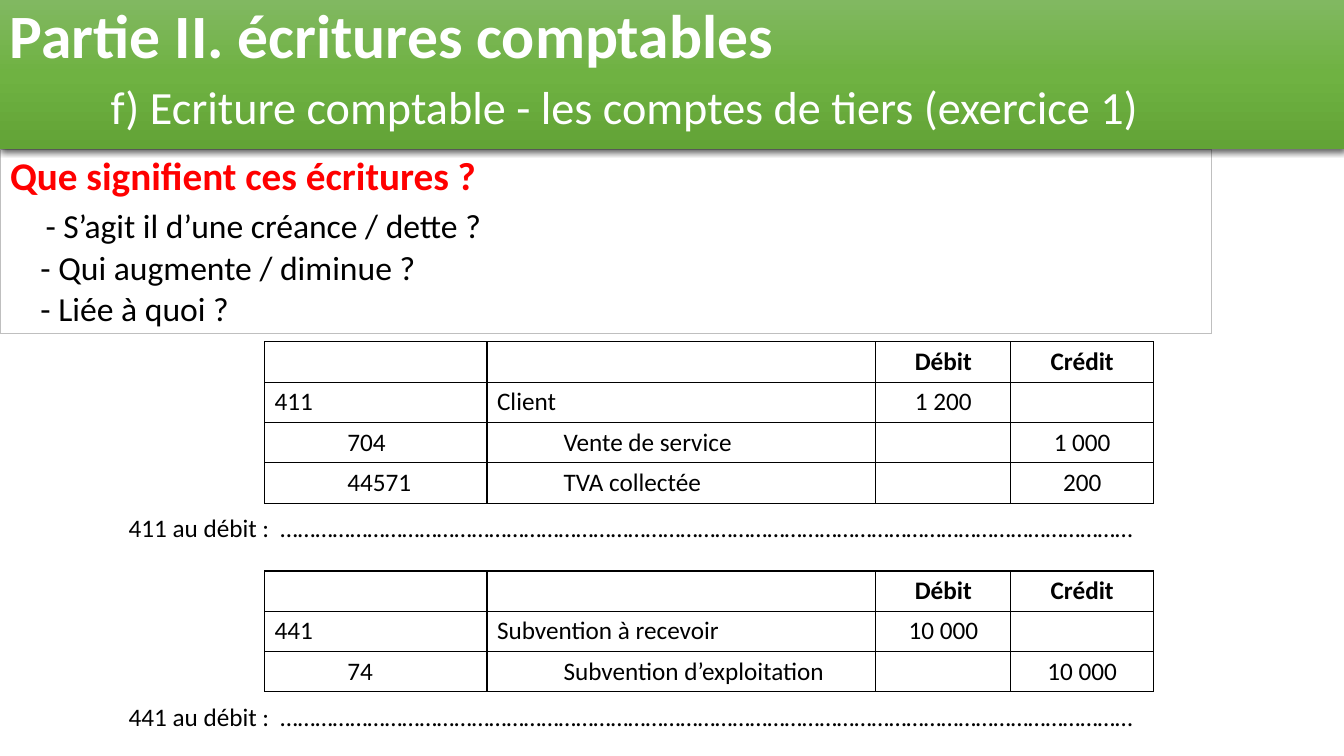
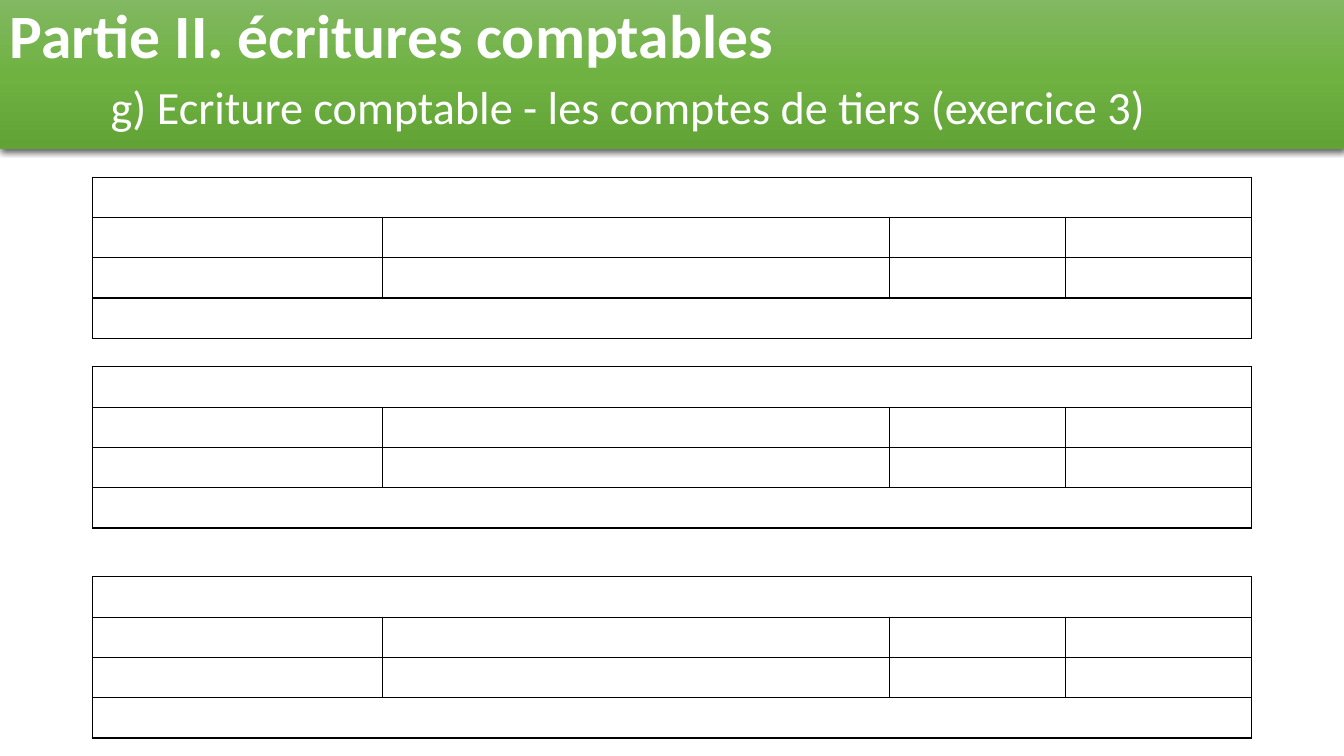
from enum import Enum
from typing import NamedTuple

from pptx import Presentation
from pptx.dml.color import RGBColor
from pptx.enum.shapes import MSO_SHAPE
from pptx.enum.text import MSO_ANCHOR, PP_ALIGN
from pptx.oxml import parse_xml
from pptx.oxml.ns import nsdecls
from pptx.util import Pt

BLACK = RGBColor(0x00, 0x00, 0x00)
WHITE = RGBColor(0xFF, 0xFF, 0xFF)
RED = RGBColor(0xFF, 0x00, 0x00)
GREY = RGBColor(0xBF, 0xBF, 0xBF)
GREEN_STOPS = (
    (0, RGBColor(0x81, 0xB8, 0x61)),
    (50, RGBColor(0x6F, 0xB2, 0x42)),
    (100, RGBColor(0x62, 0xA3, 0x36)),
)

FONT = "Calibri"
SLIDE_WIDTH, SLIDE_HEIGHT = 960, 540
BAND_HEIGHT = 106.4
ROW_HEIGHT = 28.8
COLUMN_SHARES = (52, 107, 47.5, 230.5, 96.5, 102)
SIDES = ("L", "R", "T", "B")
PART_TITLE = "Partie II. écritures comptables"
DOTS = "…………………………………………………………………………………………………………………………………"


class RowKind(Enum):
    HEADING = "heading"
    DEBIT = "debit"
    CREDIT = "credit"
    FULL = "full"


class LedgerRow(NamedTuple):
    kind: RowKind
    account: str = ""
    label: str = ""
    debit: str = ""
    credit: str = ""


class Ledger(NamedTuple):
    left: float
    top: float
    width: float
    rows: tuple[LedgerRow, ...]


class Question(NamedTuple):
    text: str
    size: float
    color: RGBColor
    indent: float = 0
    space_before: float = 0


HEADING = LedgerRow(RowKind.HEADING, debit="Débit", credit="Crédit")
EMPTY_ROWS = (
    LedgerRow(RowKind.FULL),
    LedgerRow(RowKind.DEBIT),
    LedgerRow(RowKind.CREDIT),
    LedgerRow(RowKind.FULL),
)

QUESTIONS = (
    Question("Que signifient ces écritures ?", 28, RED),
    Question("- S’agit il d’une créance / dette ?", 24, BLACK, 25.3, 4),
    Question("- Qui augmente / diminue ?", 24, BLACK, 21.7, 0.5),
    Question("- Liée à quoi ?", 24, BLACK, 21.7),
)

EXERCISE_LEDGERS = (
    Ledger(189, 244.2, 635, (
        HEADING,
        LedgerRow(RowKind.DEBIT, "411", "Client", "1 200"),
        LedgerRow(RowKind.CREDIT, "704", "Vente de service", credit="1 000"),
        LedgerRow(RowKind.CREDIT, "44571", "TVA collectée", credit="200"),
    )),
    Ledger(189, 407.8, 635, (
        HEADING,
        LedgerRow(RowKind.DEBIT, "441", "Subvention à recevoir", "10 000"),
        LedgerRow(RowKind.CREDIT, "74", "Subvention d’exploitation", credit="10 000"),
    )),
)
EMPTY_LEDGERS = tuple(Ledger(66.2, top, 828, EMPTY_ROWS) for top in (126.5, 262, 412))


def style_font(paragraph, size: float, color: RGBColor = BLACK, bold: bool = False) -> None:
    font = paragraph.font
    font.name, font.size, font.bold = FONT, Pt(size), bold
    font.color.rgb = color


def set_borders(cell, color: RGBColor, open_side: str = "") -> None:
    cell.fill.solid()
    cell.fill.fore_color.rgb = WHITE
    properties = cell._tc.get_or_add_tcPr()
    for index, side in enumerate(SIDES):
        paint = (
            "<a:noFill/>" if side == open_side
            else f'<a:solidFill><a:srgbClr val="{color}"/></a:solidFill>'
        )
        properties.insert(index, parse_xml(
            f'<a:ln{side} {nsdecls("a")} w="12700">{paint}</a:ln{side}>'
        ))


def add_plain_table(slide, rows: int, columns: int, left: float, top: float,
                    width: float, height: float):
    table = slide.shapes.add_table(
        rows, columns, Pt(left), Pt(top), Pt(width), Pt(height)
    ).table
    table.first_row = table.horz_banding = False
    return table


def write_cell(cell, text: str, bold: bool, centred: bool) -> None:
    paragraph = cell.text_frame.paragraphs[0]
    paragraph.text = text
    paragraph.alignment = PP_ALIGN.CENTER if centred else PP_ALIGN.LEFT
    style_font(paragraph, 18, bold=bold)


def add_ledger(slide, ledger: Ledger) -> None:
    table = add_plain_table(
        slide, len(ledger.rows), len(COLUMN_SHARES), ledger.left, ledger.top,
        ledger.width, ROW_HEIGHT * len(ledger.rows),
    )
    for column, share in zip(table.columns, COLUMN_SHARES):
        column.width = Pt(ledger.width * share / sum(COLUMN_SHARES))
    for row_index, row in enumerate(ledger.rows):
        table.rows[row_index].height = Pt(ROW_HEIGHT)
        is_credit = row.kind is RowKind.CREDIT
        for column_index in range(len(COLUMN_SHARES)):
            cell = table.cell(row_index, column_index)
            cell.margin_top = cell.margin_bottom = Pt(3.4)
            open_side = ""
            if is_credit and column_index < 4:
                open_side = "L" if column_index % 2 else "R"
            set_borders(cell, BLACK, open_side)
        if row.kind is RowKind.FULL:
            spans = ((0, 5),)
        elif is_credit:
            spans = ()
        else:
            spans = ((0, 1), (2, 3))
        for first, last in spans:
            table.cell(row_index, first).merge(table.cell(row_index, last))
        shift = 1 if is_credit else 0
        texts = {shift: row.account, 2 + shift: row.label, 4: row.debit, 5: row.credit}
        for column_index, text in texts.items():
            if text:
                write_cell(table.cell(row_index, column_index), text,
                           row.kind is RowKind.HEADING, column_index >= 4)


def add_questions(slide) -> None:
    table = add_plain_table(slide, 1, 1, 0, BAND_HEIGHT, 865.5, 131)
    cell = table.cell(0, 0)
    set_borders(cell, GREY)
    cell.margin_top, cell.margin_bottom = Pt(3.2), Pt(2)
    frame = cell.text_frame
    for index, question in enumerate(QUESTIONS):
        paragraph = frame.add_paragraph() if index else frame.paragraphs[0]
        paragraph.text = question.text
        paragraph.space_before = Pt(question.space_before)
        style_font(paragraph, question.size, question.color, index == 0)
        paragraph._p.get_or_add_pPr().set("marL", str(Pt(question.indent)))


def add_answer_line(slide, account: str, top: float) -> None:
    frame = slide.shapes.add_textbox(Pt(84.8), Pt(top), Pt(843), Pt(29)).text_frame
    frame.word_wrap = True
    paragraph = frame.paragraphs[0]
    paragraph.text = f"{account} au débit :  {DOTS}"
    style_font(paragraph, 18)


def add_title_band(slide, subtitle: str) -> None:
    band = slide.shapes.add_shape(
        MSO_SHAPE.RECTANGLE, 0, 0, Pt(SLIDE_WIDTH), Pt(BAND_HEIGHT)
    )
    band.line.fill.background()
    band.shadow.inherit = False
    properties = band._element.spPr
    stops = "".join(
        f'<a:gs pos="{position * 1000}"><a:srgbClr val="{color}"/></a:gs>'
        for position, color in GREEN_STOPS
    )
    properties.insert(2, parse_xml(
        f'<a:gradFill {nsdecls("a")} rotWithShape="1"><a:gsLst>{stops}</a:gsLst>'
        '<a:lin ang="5400000" scaled="0"/></a:gradFill>'
    ))
    properties[-1].append(parse_xml(
        f'<a:outerShdw {nsdecls("a")} blurRad="{Pt(4.5)}" dist="{Pt(1.5)}" '
        'dir="5400000" algn="ctr" rotWithShape="0">'
        f'<a:srgbClr val="{BLACK}"><a:alpha val="63000"/></a:srgbClr></a:outerShdw>'
    ))
    frame = band.text_frame
    frame.word_wrap = True
    frame.vertical_anchor = MSO_ANCHOR.MIDDLE
    frame.margin_bottom = Pt(7.6)
    paragraph = frame.paragraphs[0]
    paragraph.alignment = PP_ALIGN.LEFT
    paragraph.line_spacing = 0.9
    style_font(paragraph, 44, WHITE, True)
    paragraph._p.get_or_add_pPr().insert(1, parse_xml(
        f'<a:tabLst {nsdecls("a")}><a:tab pos="{Pt(72)}" algn="l"/></a:tabLst>'
    ))
    paragraph.add_run().text = PART_TITLE
    paragraph.add_line_break()
    paragraph.add_run().text = "\t"
    run = paragraph.add_run()
    run.text = subtitle
    run.font.size = Pt(33)
    run.font.bold = False


def main() -> None:
    presentation = Presentation()
    presentation.slide_width = Pt(SLIDE_WIDTH)
    presentation.slide_height = Pt(SLIDE_HEIGHT)
    blank = presentation.slide_layouts[6]

    slide = presentation.slides.add_slide(blank)
    add_questions(slide)
    for ledger in EXERCISE_LEDGERS:
        add_ledger(slide, ledger)
        bottom = ledger.top + ROW_HEIGHT * len(ledger.rows)
        add_answer_line(slide, ledger.rows[1].account, bottom + 3.1)
    add_title_band(slide, "f) Ecriture comptable - les comptes de tiers (exercice 1)")

    slide = presentation.slides.add_slide(blank)
    for ledger in EMPTY_LEDGERS:
        add_ledger(slide, ledger)
    add_title_band(slide, "g) Ecriture comptable - les comptes de tiers (exercice 3)")

    presentation.save("out.pptx")


if __name__ == "__main__":
    main()
